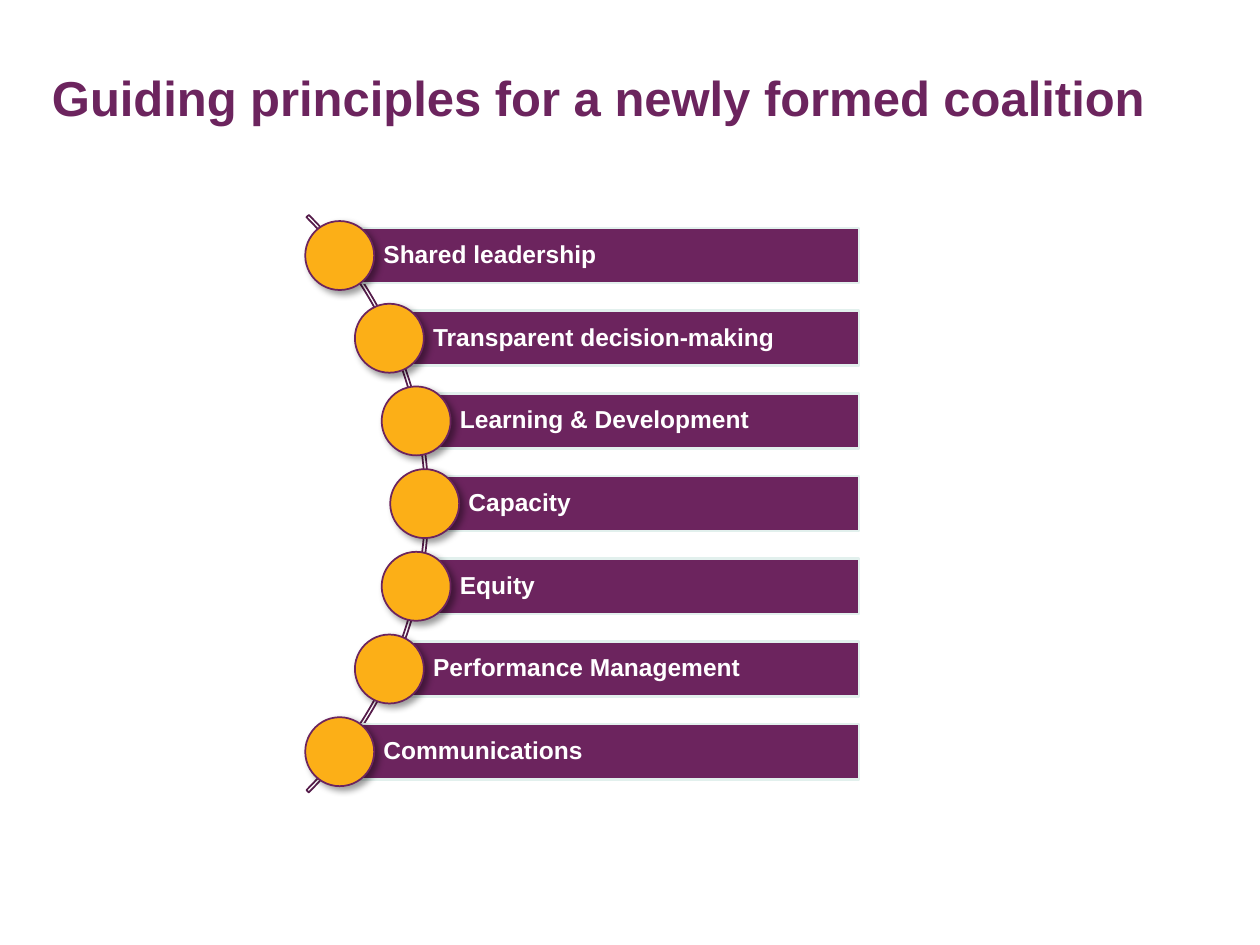
from math import sqrt

from lxml.etree import SubElement
from pptx import Presentation
from pptx.dml.color import RGBColor
from pptx.enum.shapes import MSO_SHAPE
from pptx.enum.text import MSO_ANCHOR, PP_ALIGN
from pptx.oxml.ns import qn
from pptx.util import Pt

TITLE = "Guiding principles for a newly formed coalition"
PRINCIPLES = [
    "Shared leadership",
    "Transparent decision-making",
    "Learning & Development",
    "Capacity",
    "Equity",
    "Performance Management",
    "Communications",
]
COLORS = {
    "purple": "6C245E",
    "arc": "561D4B",
    "bar_edge": "E2F0ED",
    "orange": "FCAF17",
    "white": "FFFFFF",
    "shadow": "000000",
}
FONT = "Arial"
CENTER_X, CENTER_Y = 11.5, 287.8
ARC_SIZE = 466.6
DOT_ORBIT = 231.2
ROW_PITCH = 47.25
BAR_RIGHT, BAR_HEIGHT = 491, 31.5
DOT_SIZE = 39.4


def color(name):
    return RGBColor.from_string(COLORS[name])


def add_text(text_frame, text, size, color_name):
    text_frame.word_wrap = True
    text_frame.vertical_anchor = MSO_ANCHOR.MIDDLE
    paragraph = text_frame.paragraphs[0]
    paragraph.alignment = PP_ALIGN.LEFT
    paragraph.line_spacing = 0.9
    run = paragraph.add_run()
    run.text = text
    run.font.name = FONT
    run.font.size = Pt(size)
    run.font.bold = True
    run.font.color.rgb = color(color_name)


def add_figure(slide, kind, left, top, width, height, fill, line, line_width):
    shape = slide.shapes.add_shape(kind, Pt(left), Pt(top), Pt(width), Pt(height))
    shape.shadow.inherit = False
    if fill:
        shape.fill.solid()
        shape.fill.fore_color.rgb = color(fill)
    else:
        shape.fill.background()
    shape.line.color.rgb = color(line)
    shape.line.width = Pt(line_width)
    return shape


def add_drop_shadow(shape):
    effects = shape._element.spPr.find(qn("a:effectLst"))
    shadow = SubElement(effects, qn("a:outerShdw"), blurRad=str(Pt(4)), dist=str(Pt(3)),
                        dir="2700000", algn="tl", rotWithShape="0")
    shade = SubElement(shadow, qn("a:srgbClr"), val=COLORS["shadow"])
    SubElement(shade, qn("a:alpha"), val="40000")


def add_principle(slide, text, offset):
    x = CENTER_X + sqrt(DOT_ORBIT ** 2 - offset ** 2)
    y = CENTER_Y + offset
    bar = add_figure(slide, MSO_SHAPE.RECTANGLE, x, y - BAR_HEIGHT / 2,
                     BAR_RIGHT - x, BAR_HEIGHT, "purple", "bar_edge", 1.5)
    frame = bar.text_frame
    frame.margin_left = Pt(25)
    frame.margin_top = frame.margin_right = frame.margin_bottom = Pt(2.8)
    add_text(frame, text, 14, "white")
    dot = add_figure(slide, MSO_SHAPE.OVAL, x - DOT_SIZE / 2, y - DOT_SIZE / 2,
                     DOT_SIZE, DOT_SIZE, "orange", "purple", 1)
    add_drop_shadow(dot)


def main():
    """Build the slide of guiding principles strung along an arc."""
    presentation = Presentation()
    presentation.slide_width, presentation.slide_height = Pt(720), Pt(540)
    slide = presentation.slides.add_slide(presentation.slide_layouts[5])

    title = slide.shapes.title
    title.left, title.top, title.width, title.height = Pt(22.5), Pt(32.5), Pt(674), Pt(50.4)
    add_text(title.text_frame, TITLE, 28, "purple")

    arc = add_figure(slide, MSO_SHAPE.BLOCK_ARC, CENTER_X - ARC_SIZE / 2,
                     CENTER_Y - ARC_SIZE / 2, ARC_SIZE, ARC_SIZE, None, "arc", 1)
    for index, value in enumerate((189, 27, 0.004)):
        arc.adjustments[index] = value

    middle = (len(PRINCIPLES) - 1) / 2
    for index, text in enumerate(PRINCIPLES):
        add_principle(slide, text, (index - middle) * ROW_PITCH)

    presentation.save("out.pptx")


if __name__ == "__main__":
    main()
